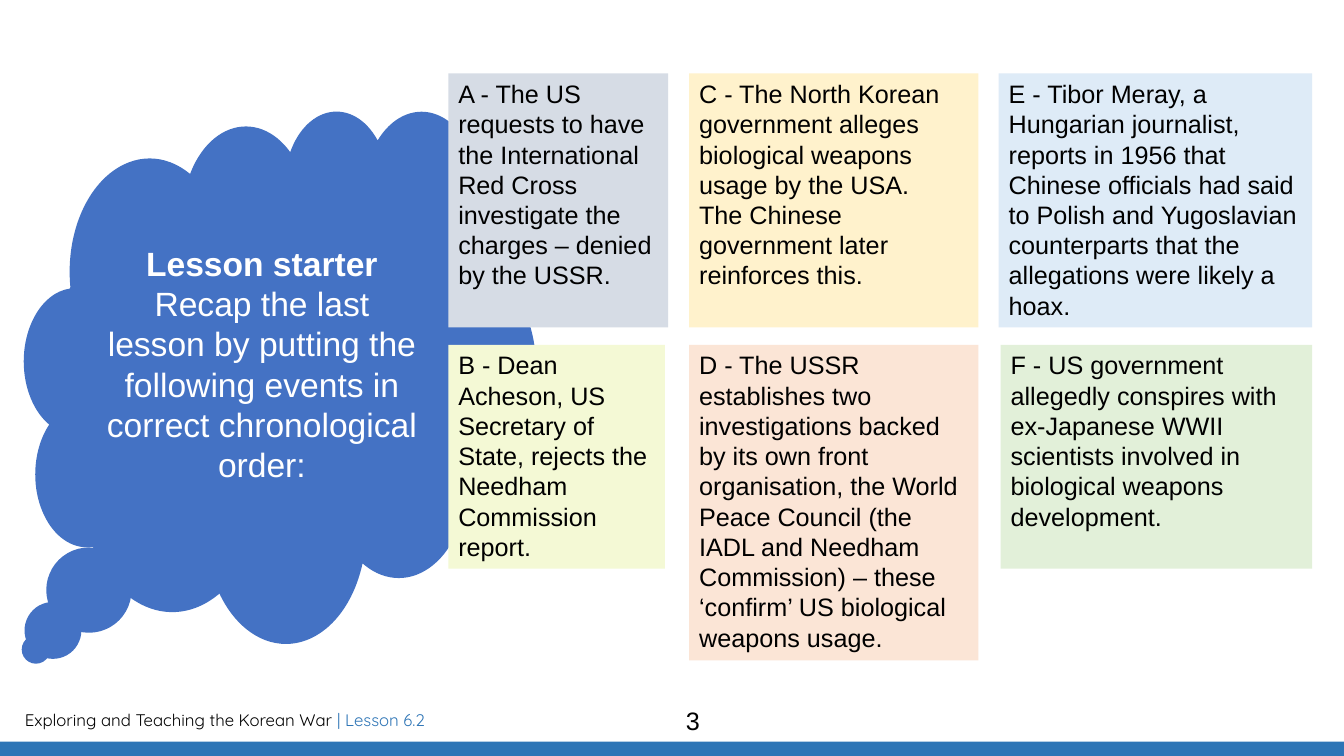
from dataclasses import dataclass

import pptx
import pptx.dml.color
import pptx.enum.shapes
import pptx.enum.text
import pptx.util

Cm = pptx.util.Cm
Shapes = pptx.enum.shapes.MSO_SHAPE
Align = pptx.enum.text.PP_ALIGN
Anchor = pptx.enum.text.MSO_ANCHOR


@dataclass(frozen=True)
class Theme:
    font: str = "Arial"
    footer_font: str = "Quicksand"
    black: str = "000000"
    white: str = "FFFFFF"
    cloud: str = "4472C4"
    accent: str = "2E75B6"
    grey: str = "D6DCE5"
    lime: str = "F4F9D5"
    yellow: str = "FFF2CC"
    orange: str = "FBE5D6"
    blue: str = "DEEBF7"
    green: str = "E2F0D9"
    starter_size: int = 24
    body_size: int = 18
    footer_size: int = 12


THEME = Theme()


@dataclass(frozen=True)
class Area:
    """A rectangle on the slide, in centimetres."""
    left: float
    top: float
    width: float
    height: float

    def lengths(self) -> tuple:
        return Cm(self.left), Cm(self.top), Cm(self.width), Cm(self.height)


@dataclass(frozen=True)
class EventCard:
    text: str
    area: Area
    fill: str


TOP_ROW, BOTTOM_ROW = 1.85, 8.69
TOP_HEIGHT, BOTTOM_HEIGHT = 6.4, 5.64
FIRST_COLUMN, SECOND_COLUMN = 11.3, 17.37

EVENTS = [
    EventCard("A - The US requests to have the International Red Cross investigate "
              "the charges – denied by the USSR.",
              Area(FIRST_COLUMN, TOP_ROW, 5.54, TOP_HEIGHT), THEME.grey),
    EventCard("B - Dean Acheson, US Secretary of State, rejects the Needham "
              "Commission report.",
              Area(FIRST_COLUMN, BOTTOM_ROW, 5.46, BOTTOM_HEIGHT), THEME.lime),
    EventCard("C - The North Korean government alleges biological weapons usage "
              "by the USA.\nThe Chinese government later reinforces this.",
              Area(SECOND_COLUMN, TOP_ROW, 7.29, TOP_HEIGHT), THEME.yellow),
    EventCard("D - The USSR establishes two investigations backed by its own front "
              "organisation, the World Peace Council (the IADL and Needham "
              "Commission) – these ‘confirm’ US biological weapons usage.",
              Area(SECOND_COLUMN, BOTTOM_ROW, 7.29, 7.95), THEME.orange),
    EventCard("E - Tibor Meray, a Hungarian journalist, reports in 1956 that Chinese "
              "officials had said to Polish and Yugoslavian counterparts that the "
              "allegations were likely a hoax.",
              Area(25.17, TOP_ROW, 7.9, TOP_HEIGHT), THEME.blue),
    EventCard("F - US government allegedly conspires with ex-Japanese WWII scientists "
              "involved in biological weapons development.",
              Area(25.22, BOTTOM_ROW, 7.85, BOTTOM_HEIGHT), THEME.green),
]


def write(para, text: str, *, size: int = THEME.body_size, color: str = THEME.black,
          font: str = THEME.font, bold: bool = False, align=Align.LEFT) -> None:
    """Append text to a paragraph; a newline becomes a line break."""
    para.alignment = align
    for index, line in enumerate(text.split("\n")):
        if index:
            para.add_line_break()
        span = para.add_run()
        span.text = line
        span.font.name = font
        span.font.size = pptx.util.Pt(size)
        span.font.bold = bold
        span.font.color.rgb = pptx.dml.color.RGBColor.from_string(color)


def add_filled_shape(page, kind, area: Area, fill: str, anchor=Anchor.TOP):
    shape = page.shapes.add_shape(kind, *area.lengths())
    shape.shadow.inherit = False
    shape.fill.solid()
    shape.fill.fore_color.rgb = pptx.dml.color.RGBColor.from_string(fill)
    shape.line.fill.background()
    shape.text_frame.word_wrap = True
    shape.text_frame.vertical_anchor = anchor
    return shape


def add_text_box(page, area: Area):
    """Add a wrapping text box and return its first paragraph."""
    box = page.shapes.add_textbox(*area.lengths())
    box.text_frame.word_wrap = True
    return box.text_frame.paragraphs[0]


def add_footer(page) -> None:
    para = add_text_box(page, Area(0.38, 17.75, 19.86, 0.76))
    for text, color in (("Exploring and Teaching the Korean War ", THEME.black),
                        ("| Lesson 6.2", THEME.accent)):
        write(para, text, size=THEME.footer_size, color=color, font=THEME.footer_font)
    add_filled_shape(page, Shapes.RECTANGLE, Area(0, 18.69, 33.87, 0.38), THEME.accent)


def add_starter_cloud(page) -> None:
    cloud = add_filled_shape(page, Shapes.CLOUD_CALLOUT, Area(0.61, 2.77, 12.9, 13.41),
                             THEME.cloud, Anchor.MIDDLE)
    cloud.adjustments[0] = -0.477
    cloud.adjustments[1] = 0.514
    frame = cloud.text_frame
    style = dict(size=THEME.starter_size, color=THEME.white, align=Align.CENTER)
    write(frame.paragraphs[0], "Lesson starter", bold=True, **style)
    write(frame.add_paragraph(), "Recap the last lesson by putting the following events "
          "in correct chronological order:", **style)


def add_event_card(page, card: EventCard) -> None:
    box = add_filled_shape(page, Shapes.RECTANGLE, card.area, card.fill)
    write(box.text_frame.paragraphs[0], card.text)


def main() -> None:
    deck = pptx.Presentation()
    deck.slide_width, deck.slide_height = Cm(33.87), Cm(19.05)
    page = deck.slides.add_slide(deck.slide_layouts[6])
    add_footer(page)
    add_starter_cloud(page)
    for card in EVENTS:
        add_event_card(page, card)
    write(add_text_box(page, Area(10.97, 17.65, 12.98, 1.02)), "3", align=Align.CENTER)
    deck.save("out.pptx")


if __name__ == "__main__":
    main()
